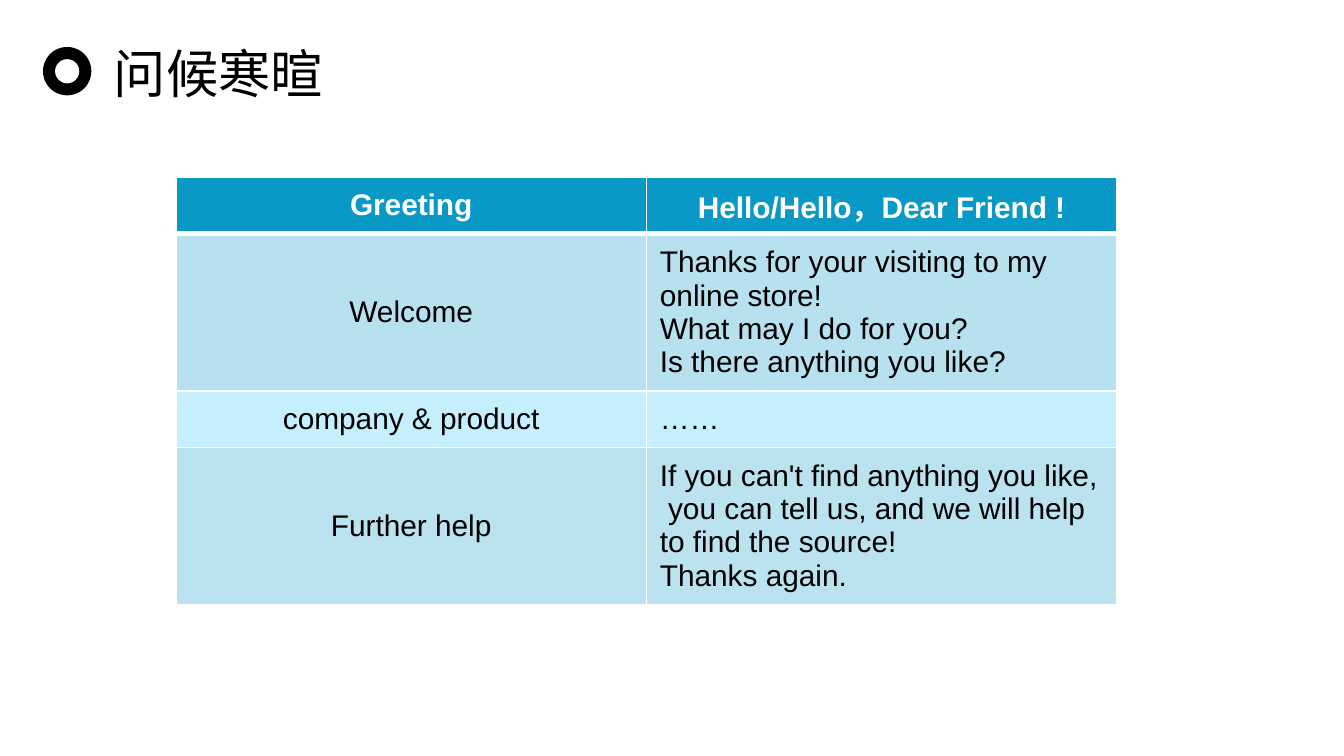
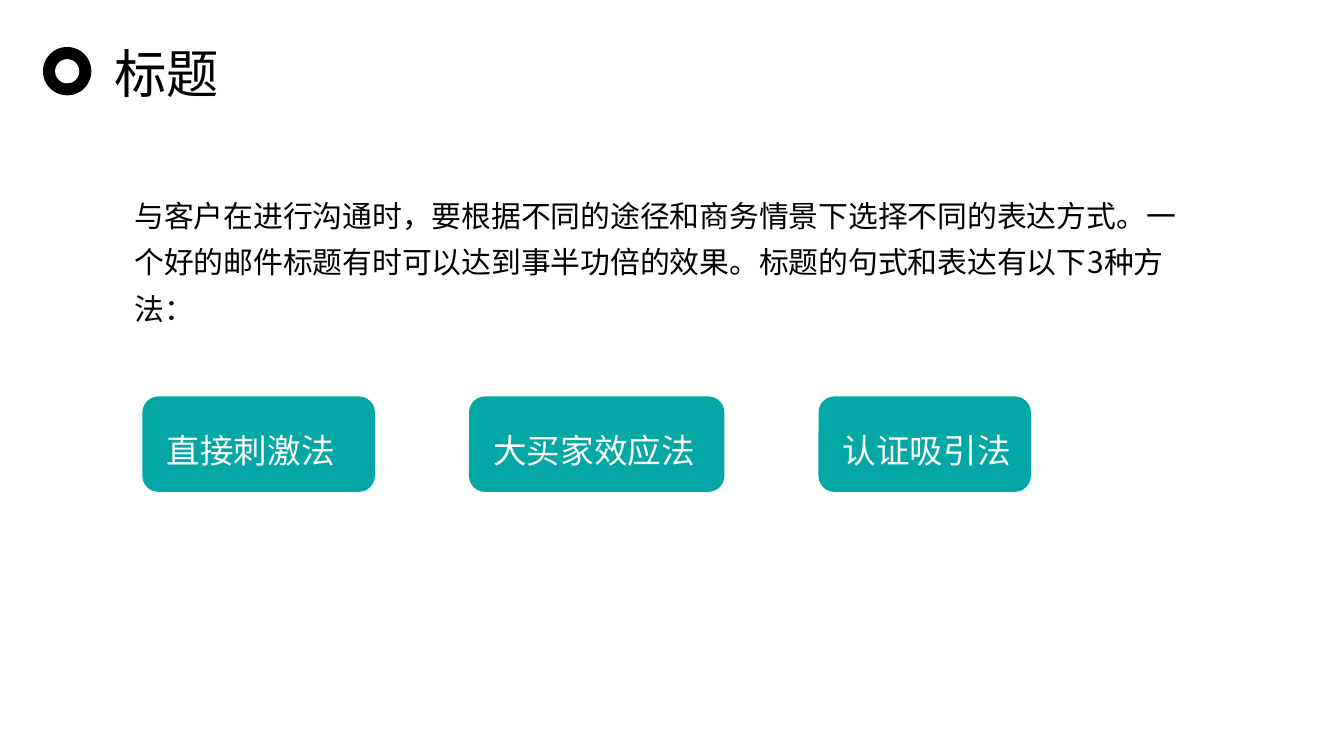
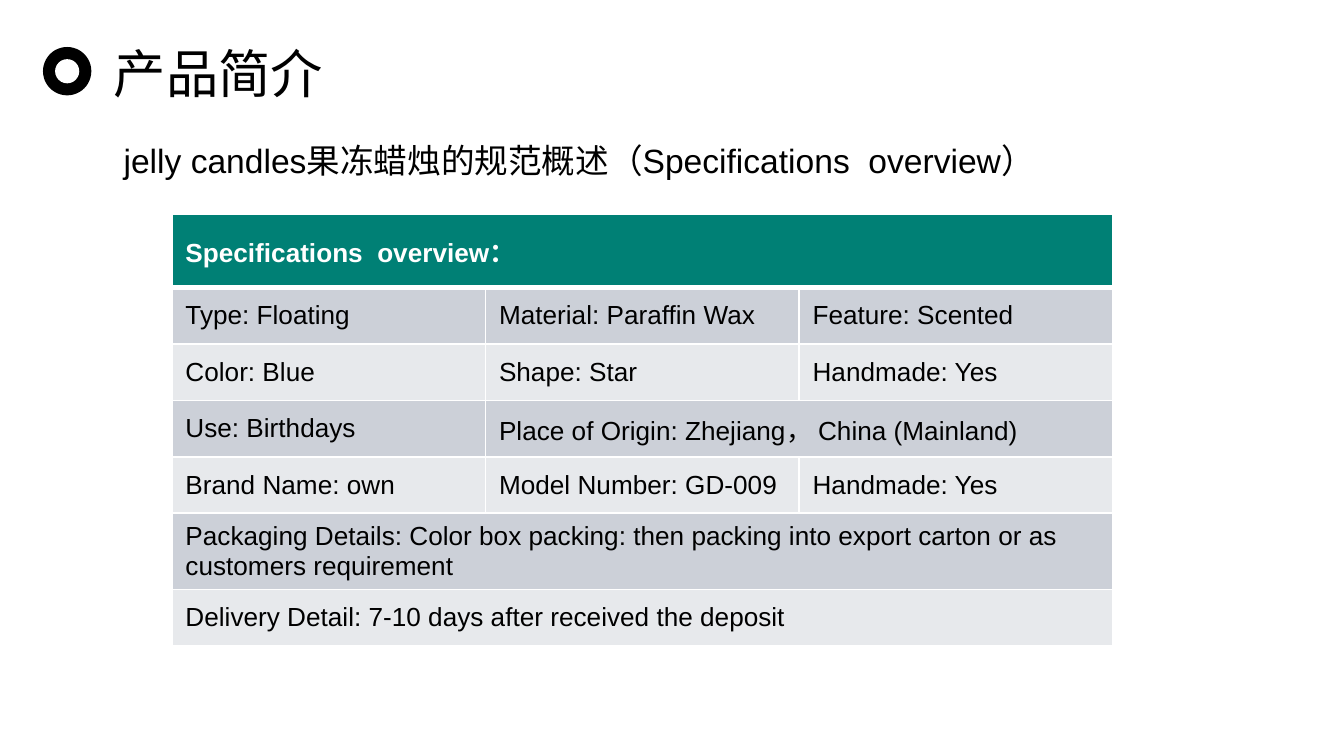
from lxml import etree
from pptx import Presentation
from pptx import util as u
from pptx.dml.color import RGBColor
from pptx.enum import shapes, text
from pptx.oxml.ns import qn

COLORS = {
    "ink": "000000",
    "paper": "FFFFFF",
    "teal": "03A8A6",
    "blue": "0999C6",
    "ice": "C5EFFC",
    "green": "008075",
    "gray": "CCD0D8",
    "mist": "E7E9EC",
}
LATIN, CHINESE = "Arial", "Noto Sans CJK SC"
COLUMNS, ROWS = 100, 56.25
CELL = u.Inches(0.1)
CENTER = text.PP_ALIGN.CENTER


def grid(*lengths):
    return [round(length * CELL) for length in lengths]


class Deck:
    """Holds the style and the slide being filled; lengths are grid columns and rows."""

    def __init__(self):
        self.show = Presentation()
        self.show.slide_width, self.show.slide_height = grid(COLUMNS, ROWS)
        self.slide = None

    def new_slide(self, heading):
        self.slide = self.show.slides.add_slide(self.show.slide_layouts[6])
        fill = self.slide.background.fill
        fill.solid()
        fill.fore_color.rgb = self.color("paper")
        ring = self.slide.shapes.add_group_shape()
        self.block(ring, "OVAL", (3.2, 3.5, 3.6, 3.6), "ink")
        self.block(ring, "OVAL", (4.1, 4.4, 1.8, 1.8), "paper")
        width = 2 + 3.9 * len(heading)
        self.words((7.5, 2.6, width, 5.7), [(heading, CHINESE)], 28, wrap=False)

    def color(self, name):
        return RGBColor.from_string(COLORS[name])

    def block(self, parent, kind, place, fill):
        shape = parent.shapes.add_shape(getattr(shapes.MSO_SHAPE, kind), *grid(*place))
        shape.shadow.inherit = False
        shape.fill.solid()
        shape.fill.fore_color.rgb = self.color(fill)
        shape.line.fill.background()

    def style(self, run, size, color="ink", font=LATIN, bold=False):
        run.font.size = u.Pt(size)
        run.font.name = font
        run.font.bold = bold
        run.font.color.rgb = self.color(color)
        east_asian = etree.SubElement(run.font._element, qn("a:ea"))
        east_asian.set("typeface", CHINESE)

    def words(self, place, pieces, size, color="ink", wrap=True, parent=None):
        """Write one paragraph of (wording, font) pieces; wrapped text is spaced wider."""
        box = (parent or self.slide).shapes.add_textbox(*grid(*place))
        frame = box.text_frame
        frame.word_wrap = wrap
        frame.auto_size = text.MSO_AUTO_SIZE.SHAPE_TO_FIT_TEXT
        paragraph = frame.paragraphs[0]
        if wrap:
            frame.margin_left = frame.margin_right = u.Inches(0.09)
            frame.margin_top = frame.margin_bottom = u.Inches(0.04)
            paragraph.line_spacing = 1.3
        for wording, font in pieces:
            run = paragraph.add_run()
            run.text = wording
            self.style(run, size, color, font)

    def button(self, left, top, width, height, label):
        pair = self.slide.shapes.add_group_shape()
        self.block(pair, "ROUNDED_RECTANGLE", (left, top, width, height), "teal")
        place = (left + 0.9, top + 1.2, width - 1.2, 4.8)
        self.words(place, [(label, CHINESE)], 18, "paper", parent=pair)

    def borders(self, cell, top=1, bottom=1):
        for side, points in (("L", 1), ("R", 1), ("T", top), ("B", bottom)):
            line = etree.SubElement(cell._tc.get_or_add_tcPr(), qn(f"a:ln{side}"))
            line.set("w", str(u.Pt(points)))
            solid = etree.SubElement(line, qn("a:solidFill"))
            etree.SubElement(solid, qn("a:srgbClr")).set("val", COLORS["paper"])

    def paint(self, cell, fill, opacity=100):
        cell.fill.solid()
        cell.fill.fore_color.rgb = self.color(fill)
        if opacity < 100:
            tint = cell._tc.tcPr.find(f"{qn('a:solidFill')}/{qn('a:srgbClr')}")
            etree.SubElement(tint, qn("a:alpha")).set("val", str(opacity * 1000))

    def table(self, place, rows, heights, fills, size, centered=()):
        """Draw rows under a header; None joins a cell to the one on its left."""
        frame = self.slide.shapes.add_table(len(rows), len(rows[0]), *grid(*place))
        table = frame.table
        table.first_row = table.horz_banding = False
        for column in table.columns:
            column.width = round(place[2] * CELL / len(rows[0]))
        for r, (wordings, height, fill) in enumerate(zip(rows, heights, fills)):
            table.rows[r].height = grid(height)[0]
            for c, wording in enumerate(wordings):
                cell = table.cell(r, c)
                self.borders(cell, 3 if r == 1 else 1, 3 if r == 0 else 1)
                self.paint(cell, *fill)
                if wording is None:
                    continue
                end = c
                while end + 1 < len(wordings) and wordings[end + 1] is None:
                    end += 1
                if end > c:
                    cell.merge(table.cell(r, end))
                cell.vertical_anchor = text.MSO_ANCHOR.MIDDLE
                cell.text_frame.text = wording
                for paragraph in cell.text_frame.paragraphs:
                    if (r, c) in centered:
                        paragraph.alignment = CENTER
                    for run in paragraph.runs:
                        self.style(run, size, "ink" if r else "paper", bold=r == 0)


def greeting(deck):
    deck.new_slide("问候寒暄")
    rows = [
        ("Greeting", "Hello/Hello，Dear Friend !"),
        ("Welcome", "Thanks for your visiting to my online store!\n"
                    "What may I do for you?\nIs there anything you like?"),
        ("company & product", "……"),
        ("Further help", "If you can't find anything you like,  you can tell us, "
                         "and we will help to find the source!\nThanks again."),
    ]
    fills = [("blue",), ("blue", 29), ("ice",), ("blue", 28)]
    centered = {(0, 1)} | {(r, 0) for r in range(len(rows))}
    deck.table((13.1, 13.2, 70, 31.7), rows, (4.2, 11.7, 4.2, 11.7), fills, 16, centered)


def subject_line(deck):
    deck.new_slide("标题")
    advice = ("与客户在进行沟通时，要根据不同的途径和商务情景下选择不同的表达方式。"
              "一个好的邮件标题有时可以达到事半功倍的效果。"
              "标题的句式和表达有以下3种方法：")
    deck.words((9.1, 13.5, 79.4, 11.4), [(advice, CHINESE)], 16)
    left, gap = 10.6, 7
    for method, width in (("直接刺激法", 17.3), ("大买家效应法", 19), ("认证吸引法", 15.8)):
        deck.button(left, 29.5, width, 7.1, method)
        left += width + gap


def product(deck):
    deck.new_slide("产品简介")
    overview = "Specifications  overview"
    summary = [("jelly candles", LATIN), ("果冻蜡烛的规范概述（", CHINESE),
               (overview, LATIN), ("）", CHINESE)]
    deck.words((8.3, 9.1, 73.6, 4.8), summary, 18)
    rows = [
        (overview + "：", None, None),
        ("Type: Floating", "Material: Paraffin Wax", "Feature: Scented"),
        ("Color: Blue", "Shape: Star", "Handmade: Yes"),
        ("Use: Birthdays", "Place of Origin: Zhejiang， China (Mainland)", None),
        ("Brand Name: own", "Model Number: GD-009", "Handmade: Yes"),
        ("Packaging Details: Color box packing: then packing into export carton "
         "or as customers requirement", None, None),
        ("Delivery Detail: 7-10 days after received the deposit", None, None),
    ]
    heights = (5.5, 4.2, 4.2, 4.2, 4.2, 5.5, 4.2)
    fills = [("green",)] + [("gray",), ("mist",)] * 3
    deck.table((12.8, 15.9, 70, 31.8), rows, heights, fills, 14)


def main():
    deck = Deck()
    for build in (greeting, subject_line, product):
        build(deck)
    deck.show.save("out.pptx")


if __name__ == "__main__":
    main()
